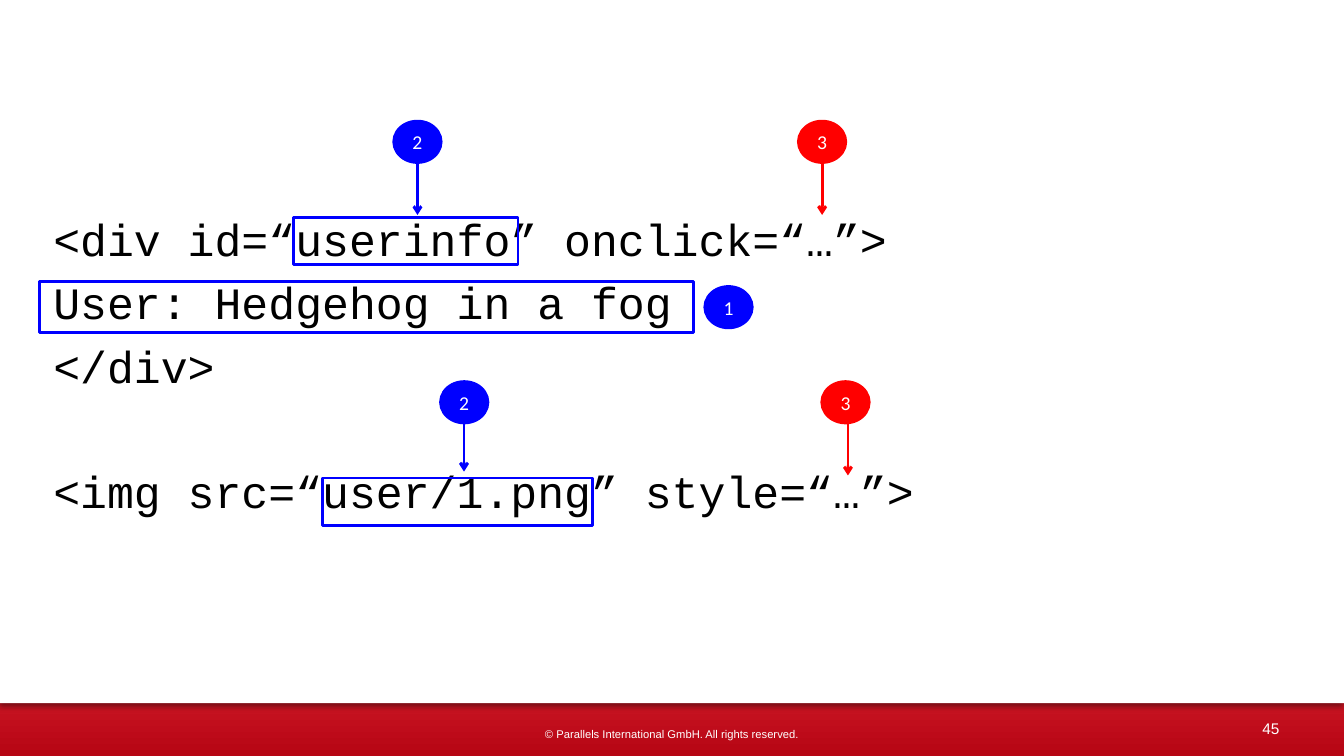
from lxml import etree
from pptx import Presentation
from pptx.dml.color import RGBColor
from pptx.enum.shapes import MSO_CONNECTOR, MSO_SHAPE
from pptx.enum.text import MSO_ANCHOR, PP_ALIGN
from pptx.oxml import parse_xml
from pptx.oxml.ns import nsdecls, qn
from pptx.util import Inches, Pt

RECT, OVAL = MSO_SHAPE.RECTANGLE, MSO_SHAPE.OVAL
STRAIGHT = MSO_CONNECTOR.STRAIGHT
MIDDLE, TOP = MSO_ANCHOR.MIDDLE, MSO_ANCHOR.TOP
CENTER, LEFT = PP_ALIGN.CENTER, PP_ALIGN.LEFT

BLUE = RGBColor(0x00, 0x00, 0xFF)
RED = RGBColor(0xFF, 0x00, 0x00)
WHITE = RGBColor(0xFF, 0xFF, 0xFF)
BLACK = RGBColor(0x00, 0x00, 0x00)
BAND_DARK = RGBColor(0xB6, 0x05, 0x13)
BAND_LIGHT = RGBColor(0xD9, 0x22, 0x31)

WIDTH, HEIGHT = Inches(13.33), Inches(7.5)

# Code grid: one column per monospaced character, one row per line of code
CODE_SIZE = Pt(32)
CODE_LEFT, CODE_TOP = Inches(0.53), Inches(2.19)
COL, ROW = Pt(19.2), Pt(45.6)
TEXT_TOP = Inches(2.1)
LINE_GAP, SKIPPED_GAP = Pt(6.9), Pt(44)
MARKER_W, MARKER_H = Inches(0.47), Inches(0.41)
ARROW_ROWS = 0.82

# Text of the line, rows skipped above it
CODE = [
    ("<div id=“userinfo” onclick=“…”>", 0),
    ("User: Hedgehog in a fog", 0),
    ("</div>", 0),
    ("<img src=“user/1.png” style=“…”>", 1),
]
# Column, row, columns wide, rows high
FRAMES = [
    (-0.53, 0.95, 24.34, 0.8),
    (8.92, -0.05, 8.36, 0.74),
    (10.01, 4.03, 10.05, 0.74),
]
# Label, colour, centre column, top row, arrow tip (column, row)
MARKERS = [
    ("1", BLUE, 25.11, 1.03, None),
    ("2", BLUE, 13.54, -1.56, (13.54, -0.09)),
    ("3", RED, 28.59, -1.56, (28.59, -0.09)),
    ("2", BLUE, 15.28, 2.52, (15.27, 3.93)),
    ("3", RED, 29.46, 2.52, (29.55, 3.99)),
]


def col_x(col):
    return round(CODE_LEFT + col * COL)


def row_y(row):
    return round(CODE_TOP + row * ROW)


def style_run(p, size, font, color):
    r = p.runs[0]
    r.font.size, r.font.name = size, font
    r.font.color.rgb = color


def add_shape(slide, kind, x, y, w, h, fill=None, line=None):
    sp = slide.shapes.add_shape(kind, x, y, w, h)
    sp.shadow.inherit = False
    if fill is None:
        sp.fill.background()
    else:
        sp.fill.solid()
        sp.fill.fore_color.rgb = fill
    if line is None:
        sp.line.fill.background()
    else:
        sp.line.color.rgb = line
        sp.line.width = Pt(2)
    return sp


def add_label(slide, text, x, y, w, h, size):
    tf = slide.shapes.add_textbox(x, y, w, h).text_frame
    tf.word_wrap = True
    tf.vertical_anchor = MIDDLE
    tf.margin_top = tf.margin_bottom = 0
    p = tf.paragraphs[0]
    p.text, p.alignment = text, CENTER
    style_run(p, size, "Arial", WHITE)


def add_backdrop(slide):
    # Red band, darker towards the bottom edge
    band_top = round(HEIGHT * 0.83)
    band = add_shape(slide, RECT, 0, band_top, WIDTH, HEIGHT - band_top)
    band.fill.gradient()
    band.fill.gradient_angle = 90
    start, end = band.fill.gradient_stops
    start.color.rgb, start.position = BAND_DARK, 0
    end.color.rgb, end.position = BAND_LIGHT, 0.8
    # White panel that casts a shadow on the band
    panel = add_shape(slide, RECT, 0, 0, WIDTH, round(HEIGHT * 0.93), WHITE)
    effects = panel._element.spPr.find(qn("a:effectLst"))
    effects.append(parse_xml(
        f'<a:outerShdw {nsdecls("a")} blurRad="{Pt(4)}" dist="{Pt(3)}" dir="5400000">'
        '<a:srgbClr val="000000"><a:alpha val="40000"/></a:srgbClr></a:outerShdw>'))


def add_code(slide):
    top = Inches(0.81)
    tf = slide.shapes.add_textbox(Inches(0.43), top, Inches(12.48), Inches(5.85)).text_frame
    tf.word_wrap = True
    tf.vertical_anchor = TOP
    tf.margin_top = TEXT_TOP - top
    for i, (text, skipped) in enumerate(CODE):
        p = tf.add_paragraph() if i else tf.paragraphs[0]
        p.text, p.alignment = text, LEFT
        p.space_before = LINE_GAP + skipped * SKIPPED_GAP if i else 0
        style_run(p, CODE_SIZE, "Courier New", BLACK)


def add_arrow(slide, col, row, color):
    x = col_x(col)
    cx = slide.shapes.add_connector(STRAIGHT, x, row_y(row - ARROW_ROWS), x, row_y(row))
    cx.line.color.rgb = color
    cx.line.width = Pt(2)
    etree.SubElement(cx.line._get_or_add_ln(), qn("a:tailEnd"), type="arrow")
    etree.SubElement(cx._element.spPr, qn("a:effectLst"))


def add_marker(slide, label, color, col, row, tip):
    if tip:
        add_arrow(slide, *tip, color)
    x = col_x(col) - MARKER_W // 2
    sp = add_shape(slide, OVAL, x, row_y(row), MARKER_W, MARKER_H, color, color)
    tf = sp.text_frame
    tf.margin_left = tf.margin_right = tf.margin_top = tf.margin_bottom = 0
    tf.vertical_anchor = MIDDLE
    tf.text = label
    p = tf.paragraphs[0]
    p.alignment = CENTER
    style_run(p, Pt(14), "Calibri", WHITE)


def main():
    prs = Presentation()
    prs.slide_width, prs.slide_height = WIDTH, HEIGHT
    slide = prs.slides.add_slide(prs.slide_layouts[6])

    # Backdrop and footer
    add_backdrop(slide)
    add_label(slide, "45", Inches(12.33), Inches(7.07), Inches(0.55), Inches(0.31), Pt(11))
    add_label(slide, "© Parallels International GmbH. All rights reserved.",
              Inches(5.12), Inches(7.22), Inches(3.09), Inches(0.13), Pt(8))

    # Code with its frames and numbered markers
    add_code(slide)
    for col, row, cols, rows in FRAMES:
        add_shape(slide, RECT, col_x(col), row_y(row),
                  round(cols * COL), round(rows * ROW), line=BLUE)
    for marker in MARKERS:
        add_marker(slide, *marker)

    prs.save("out.pptx")


if __name__ == "__main__":
    main()
